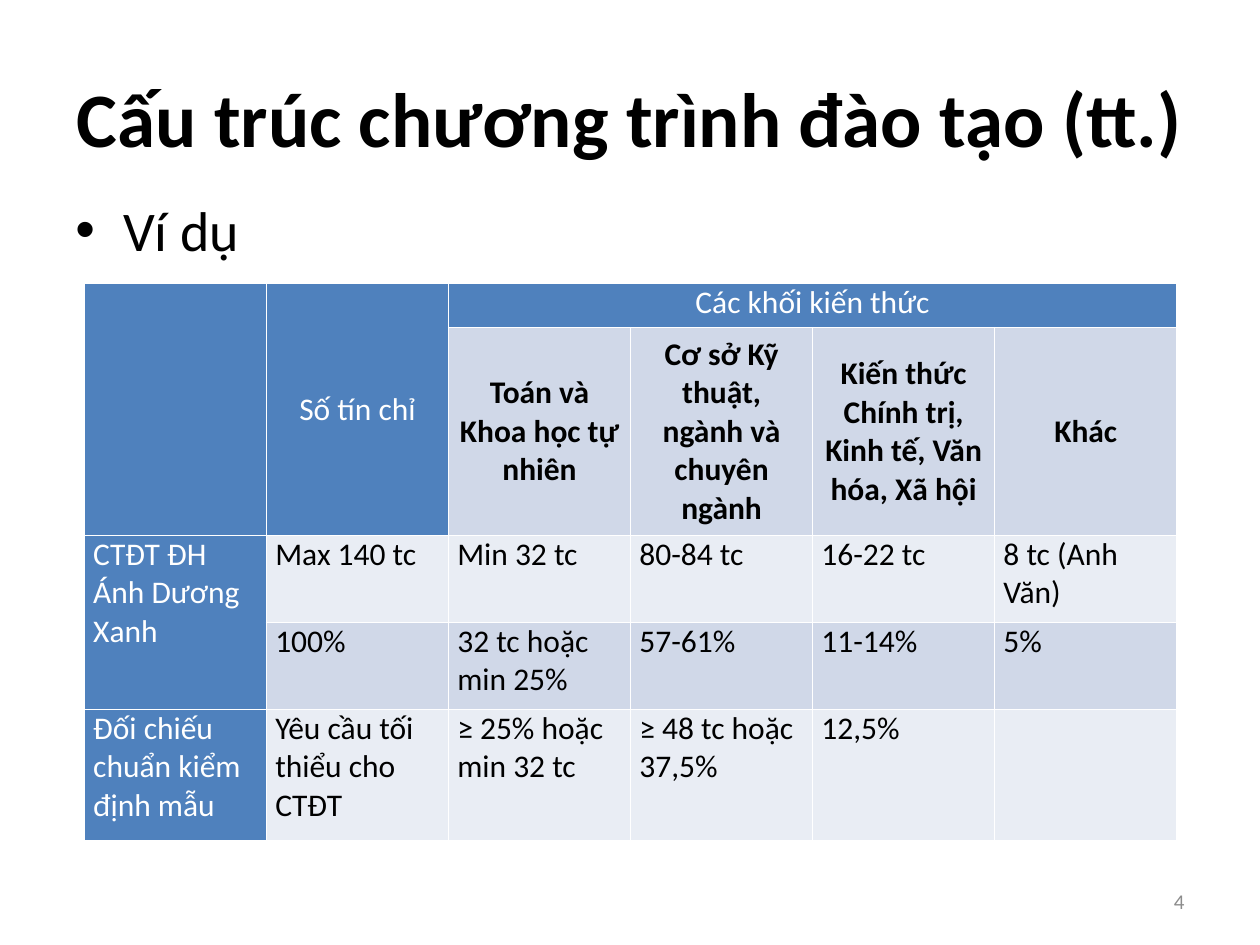
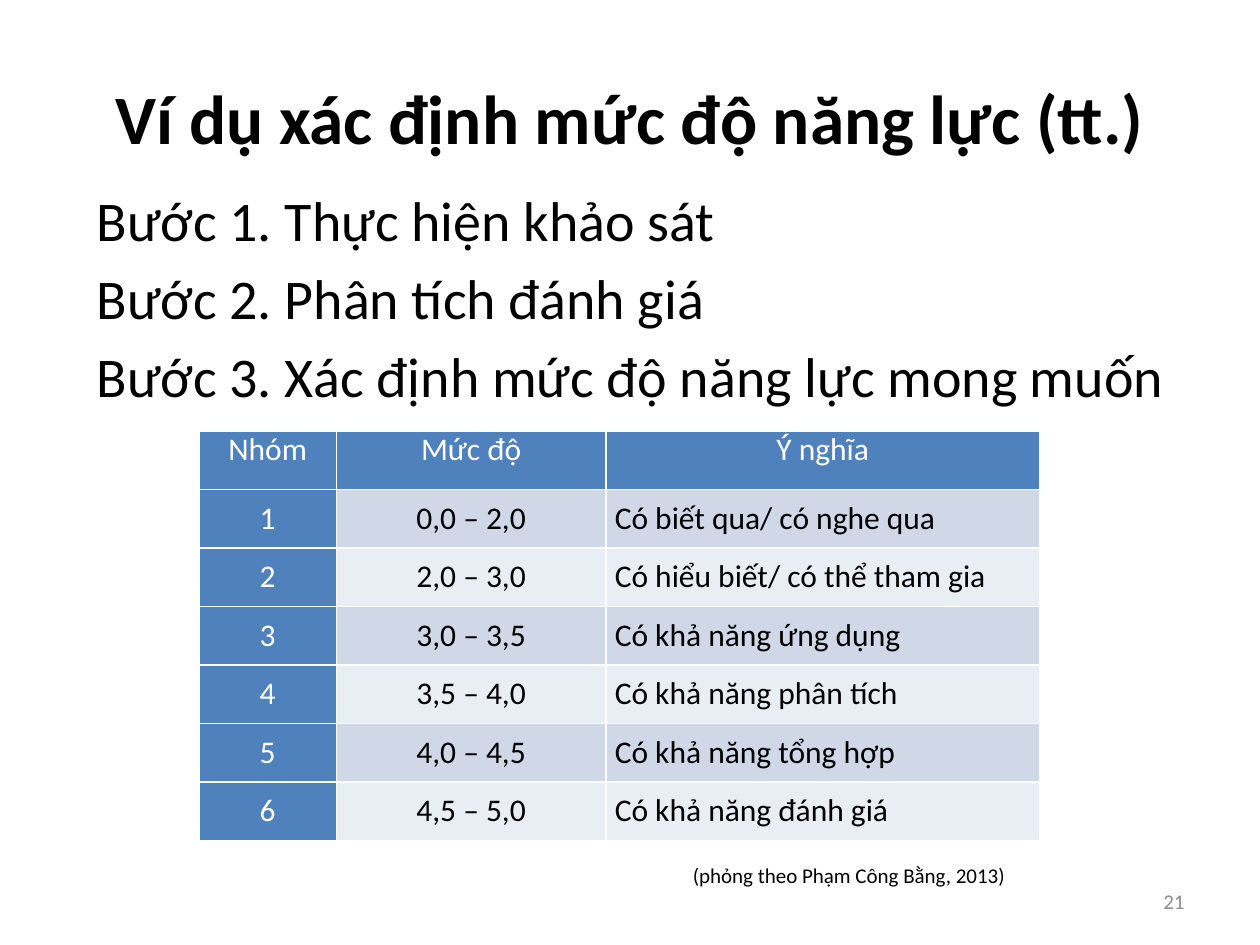
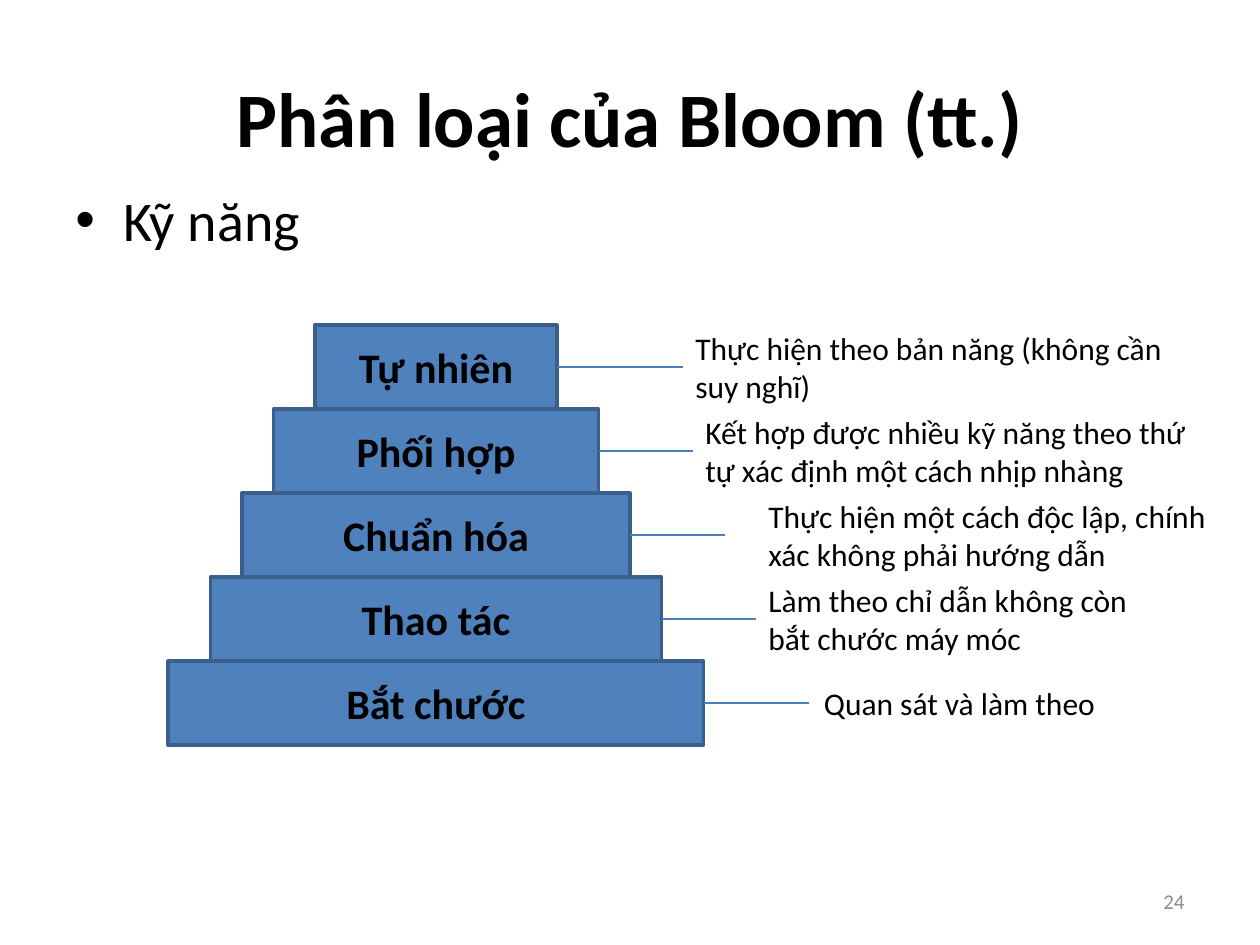
import lxml.etree
import pptx
import pptx.dml.color
import pptx.enum.shapes
import pptx.enum.text
import pptx.oxml.ns
import pptx.util

Inches = pptx.util.Inches
Pt = pptx.util.Pt
RGB = pptx.dml.color.RGBColor
qn = pptx.oxml.ns.qn
ALIGN = pptx.enum.text.PP_ALIGN
ANCHOR = pptx.enum.text.MSO_ANCHOR

FONT = "Calibri"
BLACK = RGB(0x00, 0x00, 0x00)
WHITE = RGB(0xFF, 0xFF, 0xFF)
GREY = RGB(0x8C, 0x8C, 0x8C)
BLUE = RGB(0x4F, 0x81, 0xBD)
OUTLINE = RGB(0x3A, 0x5F, 0x8C)
LEADER = RGB(0x4B, 0x7E, 0xBC)
BANDS = [RGB(0xE9, 0xED, 0xF4), RGB(0xD0, 0xD8, 0xE8)]

CREDITS = {
    "title": "Cấu trúc chương trình đào tạo (tt.)",
    "number": 4,
    "body": ["Ví dụ"],
    "rows": [
        ["", "Số tín chỉ", "Các khối kiến thức", "", "", ""],
        ["", "", "Toán và Khoa học tự nhiên",
         "Cơ sở Kỹ thuật, ngành và chuyên ngành",
         "Kiến thức Chính trị, Kinh tế, Văn hóa, Xã hội", "Khác"],
        ["CTĐT ĐH Ánh Dương Xanh", "Max 140 tc", "Min 32 tc",
         "80-84 tc", "16-22 tc", "8 tc (Anh Văn)"],
        ["", "100%", "32 tc hoặc min 25%", "57-61%", "11-14%", "5%"],
        ["Đối chiếu chuẩn kiểm định mẫu", "Yêu cầu tối thiểu cho CTĐT",
         "≥ 25% hoặc min 32 tc", "≥ 48 tc hoặc 37,5%", "12,5%", ""],
    ],
    "merges": [(0, 0, 1, 0), (0, 1, 1, 1), (0, 2, 0, 5), (2, 0, 3, 0)],
    "widths": [8.67 / 6] * 6,
    "heights": [0.35, 1.65, 0.69, 0.69, 1.04],
}

LEVELS = {
    "title": "Ví dụ xác định mức độ năng lực (tt.)",
    "number": 21,
    "body": [
        "Bước 1. Thực hiện khảo sát",
        "Bước 2. Phân tích đánh giá",
        "Bước 3. Xác định mức độ năng lực mong muốn",
    ],
    "rows": [
        ["Nhóm", "Mức độ", "Ý nghĩa"],
        ["1", "0,0 – 2,0", "Có biết qua/ có nghe qua"],
        ["2", "2,0 – 3,0", "Có hiểu biết/ có thể tham gia"],
        ["3", "3,0 – 3,5", "Có khả năng ứng dụng"],
        ["4", "3,5 – 4,0", "Có khả năng phân tích"],
        ["5", "4,0 – 4,5", "Có khả năng tổng hợp"],
        ["6", "4,5 – 5,0", "Có khả năng đánh giá"],
    ],
    "widths": [1.09, 2.14, 3.44],
    "heights": [3.25 / 7] * 7,
    "credit": "(phỏng theo Phạm Công Bằng, 2013)",
}

BLOOM = {
    "title": "Phân loại của Bloom (tt.)",
    "number": 24,
    "body": ["Kỹ năng"],
    "tiers": [
        ("Tự nhiên", 1.92, 5.42, (5.42, 4.17, True),
         "Thực hiện theo bản năng (không cần suy nghĩ)"),
        ("Phối hợp", 2.58, 5.5, (5.5, 4.17, True),
         "Kết hợp được nhiều kỹ năng theo thứ tự xác định một cách nhịp nhàng"),
        ("Chuẩn hóa", 3.08, 5.75, (6, 3.76, False),
         "Thực hiện một cách độc lập, chính\nxác không phải hướng dẫn"),
        ("Thao tác", 3.58, 6, (6, 3.15, False),
         "Làm theo chỉ dẫn không còn\nbắt chước máy móc"),
        ("Bắt chước", 4.25, 6.42, (6.44, 2.38, False),
         "Quan sát và làm theo"),
    ],
}
TIER_CENTER, TIER_TOP, TIER_HEIGHT, NOTE_HEIGHT = 3.46, 2.58, 2 / 3, 0.71


def write(p, text, align=ALIGN.LEFT, **font):
    p.alignment = align
    p.text = text
    look = {"name": FONT, "size": Pt(18), "bold": False, **font}
    color = look.pop("color", BLACK)
    for r in p.runs:
        for key, value in look.items():
            setattr(r.font, key, value)
        r.font.color.rgb = color


def add_text(slide, box, lines, anchor=ANCHOR.TOP, wrap=True, **style):
    tf = slide.shapes.add_textbox(*map(Inches, box)).text_frame
    tf.word_wrap = wrap
    tf.vertical_anchor = anchor
    for i, line in enumerate(lines):
        write(tf.add_paragraph() if i else tf.paragraphs[0], line, **style)
    return tf


def add_body(slide, box, lines, bullet=True):
    tf = add_text(slide, box, lines, size=Pt(32))
    for p in tf.paragraphs:
        p.space_before = Pt(6.4)
        if bullet:
            pPr = p._p.get_or_add_pPr()
            pPr.set("marL", str(Inches(0.38)))
            pPr.set("indent", str(-Inches(0.38)))
            lxml.etree.SubElement(pPr, qn("a:buFont")).set("typeface", "Arial")
            lxml.etree.SubElement(pPr, qn("a:buChar")).set("char", "•")


def add_base(prs, content, size=44):
    slide = prs.slides.add_slide(prs.slide_layouts[6])
    add_text(slide, (0.5, 0.3, 9, 1.25), [content["title"]], ANCHOR.MIDDLE,
             align=ALIGN.CENTER, size=Pt(size), bold=True)
    add_text(slide, (7.17, 6.95, 2.33, 0.4), [str(content["number"])],
             ANCHOR.MIDDLE, align=ALIGN.RIGHT, size=Pt(12), color=GREY)
    return slide


def add_borders(cell):
    tcPr = cell._tc.get_or_add_tcPr()
    for i, side in enumerate(("lnL", "lnR", "lnT", "lnB")):
        ln = lxml.etree.Element(qn("a:" + side), w=str(Pt(1)))
        fill = lxml.etree.SubElement(ln, qn("a:solidFill"))
        lxml.etree.SubElement(fill, qn("a:srgbClr")).set("val", str(WHITE))
        tcPr.insert(i, ln)


def add_grid(slide, left, top, content, is_centred, is_middle, is_bold):
    rows, widths, heights = (content[k] for k in ("rows", "widths", "heights"))
    box = map(Inches, (left, top, sum(widths), sum(heights)))
    table = slide.shapes.add_table(len(rows), len(widths), *box).table
    for column, width in zip(table.columns, widths):
        column.width = Inches(width)
    for row, height in zip(table.rows, heights):
        row.height = Inches(height)
    for r, row in enumerate(rows):
        for c, text in enumerate(row):
            cell = table.cell(r, c)
            is_head = r == 0 or c == 0
            layout = {
                "margin_left": Inches(0.07), "margin_right": Inches(0.07),
                "margin_top": 0, "margin_bottom": 0,
                "vertical_anchor": ANCHOR.MIDDLE if is_middle(r, c) else ANCHOR.TOP,
            }
            for key, value in layout.items():
                setattr(cell, key, value)
            cell.fill.solid()
            cell.fill.fore_color.rgb = BLUE if is_head else BANDS[r % 2]
            add_borders(cell)
            write(cell.text_frame.paragraphs[0], text,
                  ALIGN.CENTER if is_centred(r, c) else ALIGN.LEFT,
                  bold=is_bold(r, c), color=WHITE if is_head else BLACK)
    for r1, c1, r2, c2 in content.get("merges", []):
        table.cell(r1, c1).merge(table.cell(r2, c2))


def add_tier(slide, i, name, width, line_end, note_place, note):
    top = TIER_TOP + i * TIER_HEIGHT
    middle = top + TIER_HEIGHT / 2
    left = TIER_CENTER - width / 2
    sp = slide.shapes.add_shape(pptx.enum.shapes.MSO_SHAPE.RECTANGLE,
                                *map(Inches, (left, top, width, TIER_HEIGHT)))
    sp.shadow.inherit = False
    sp.fill.solid()
    sp.fill.fore_color.rgb = BLUE
    sp.line.color.rgb = OUTLINE
    sp.line.width = Pt(2)
    sp.text_frame.vertical_anchor = ANCHOR.MIDDLE
    write(sp.text_frame.paragraphs[0], name, ALIGN.CENTER, size=Pt(24), bold=True)

    line = slide.shapes.add_connector(
        pptx.enum.shapes.MSO_CONNECTOR.STRAIGHT,
        *map(Inches, (left + width, middle, line_end, middle)))
    line.line.color.rgb = LEADER
    line.line.width = Pt(0.75)
    lxml.etree.SubElement(line._element.spPr, qn("a:effectLst"))

    note_left, note_width, wrap = note_place
    add_text(slide, (note_left, middle - NOTE_HEIGHT / 2, note_width, NOTE_HEIGHT),
             [note], ANCHOR.MIDDLE, wrap)


def main():
    prs = pptx.Presentation()
    prs.slide_width, prs.slide_height = Inches(10), Inches(7.5)

    slide = add_base(prs, CREDITS)
    add_body(slide, (0.5, 1.5, 9, 4.95), CREDITS["body"])
    add_grid(slide, 0.67, 2.25, CREDITS,
             is_centred=lambda r, c: r < 2,
             is_middle=lambda r, c: r == 1 or (r, c) == (0, 1),
             is_bold=lambda r, c: r == 1)

    slide = add_base(prs, LEVELS, 39.6)
    add_body(slide, (0.67, 1.42, 8.83, 4.95), LEVELS["body"], bullet=False)
    add_grid(slide, 1.58, 3.42, LEVELS,
             is_centred=lambda r, c: r == 0 or c < 2,
             is_middle=lambda r, c: r > 0,
             is_bold=lambda r, c: False)
    add_text(slide, (5.4, 6.8, 2.71, 0.3), [LEVELS["credit"]], wrap=False,
             size=Pt(12))

    slide = add_base(prs, BLOOM)
    add_body(slide, (0.5, 1.42, 9, 4.95), BLOOM["body"])
    for i, tier in enumerate(BLOOM["tiers"]):
        add_tier(slide, i, *tier)

    prs.save("out.pptx")


if __name__ == "__main__":
    main()
